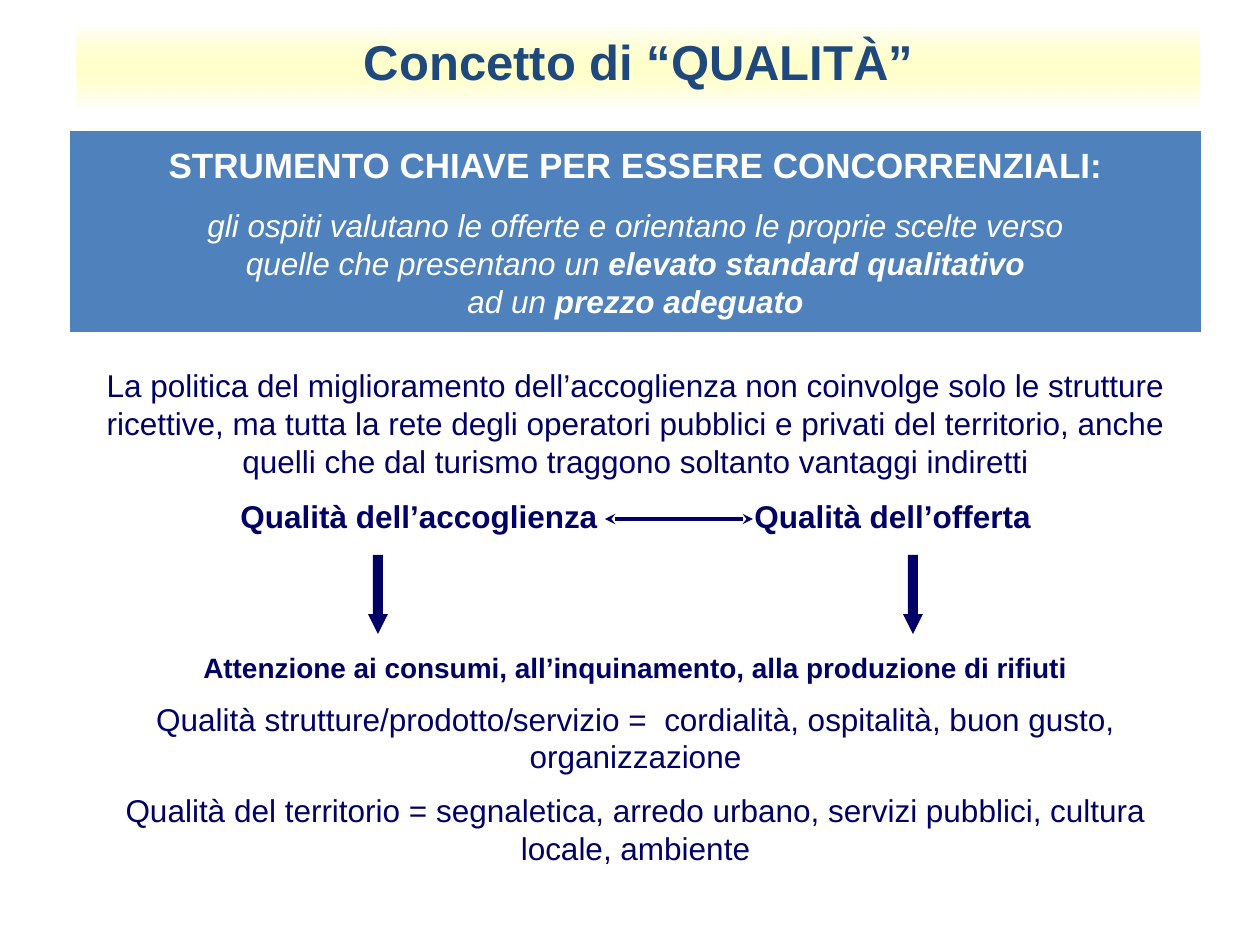
from lxml import etree
from pptx import Presentation
from pptx import util as u
from pptx.dml.color import RGBColor
from pptx.enum import shapes, text
from pptx.oxml import parse_xml
from pptx.oxml.ns import nsdecls, qn

PX = 914400 // 126
NAVY, WHITE, BLUE, TITLE_BLUE = "000066", "FFFFFF", "4F81BD", "1F497D"
CENTER, LEFT, RIGHT = text.PP_ALIGN.CENTER, text.PP_ALIGN.LEFT, text.PP_ALIGN.RIGHT


def px(*values):
    return [u.Emu(v * PX) for v in values]


def rgb(value):
    return RGBColor.from_string(value)


def set_frame(tf, anchor, inset_x=0.1, inset_y=0.05):
    tf.word_wrap = True
    tf.auto_size = text.MSO_AUTO_SIZE.NONE
    tf.vertical_anchor = anchor
    tf.margin_left = tf.margin_right = u.Inches(inset_x)
    tf.margin_top = tf.margin_bottom = u.Inches(inset_y)


def write(tf, paragraphs, color, align=CENTER):
    """Fill a frame with (runs, size, bold, italic, space before); a run in * is bold."""
    for i, (runs, size, bold, italic, before) in enumerate(paragraphs):
        p = tf.add_paragraph() if i else tf.paragraphs[0]
        p.alignment, p.space_before = align, u.Pt(before)
        p.font.name, p.font.size = "Arial", u.Pt(size)
        p.font.bold, p.font.italic = bold, italic
        p.font.color.rgb = rgb(color)
        for j, part in enumerate(runs.split("*")):
            if part:
                r = p.add_run()
                r.text = part
                # Runs carry the format as well, for viewers that skip paragraph defaults
                r.font.name, r.font.size = "Arial", u.Pt(size)
                r.font.bold, r.font.italic = bold or j % 2 == 1, italic
                r.font.color.rgb = rgb(color)


def add_title(s, title, box):
    sp = s.shapes.title
    sp.left, sp.top, sp.width, sp.height = px(*box)
    sp._element.spPr.append(parse_xml(
        f'<a:gradFill {nsdecls("a")} rotWithShape="1"><a:gsLst>'
        '<a:gs pos="0"><a:srgbClr val="FFFFFF"/></a:gs>'
        '<a:gs pos="50000"><a:srgbClr val="FFFF99"><a:alpha val="50000"/></a:srgbClr></a:gs>'
        '<a:gs pos="100000"><a:srgbClr val="FFFFFF"/></a:gs>'
        '</a:gsLst><a:lin ang="5400000" scaled="1"/></a:gradFill>'))
    tf = sp.text_frame
    set_frame(tf, text.MSO_ANCHOR.MIDDLE, 0, 0)
    write(tf, [(title, 28, True, False, 0)], TITLE_BLUE)
    tf.paragraphs[0].line_spacing = 0.8


def add_text(s, box, paragraphs, align=CENTER):
    tf = s.shapes.add_textbox(*px(*box)).text_frame
    set_frame(tf, text.MSO_ANCHOR.TOP)
    write(tf, paragraphs, NAVY, align)


def add_filled(s, kind, box, color):
    sp = s.shapes.add_shape(kind, *px(*box))
    sp.shadow.inherit = False
    sp.fill.solid()
    sp.fill.fore_color.rgb = rgb(color)
    sp.line.fill.background()
    return sp


def add_banner(s, box, paragraphs):
    sp = add_filled(s, shapes.MSO_SHAPE.RECTANGLE, box, BLUE)
    sp.line.color.rgb, sp.line.width = rgb(WHITE), u.Pt(1)
    set_frame(sp.text_frame, text.MSO_ANCHOR.MIDDLE)
    write(sp.text_frame, paragraphs, WHITE)


def add_down_arrow(s, box):
    sp = add_filled(s, shapes.MSO_SHAPE.DOWN_ARROW, box, NAVY)
    sp.adjustments[0], sp.adjustments[1] = 0.5, 1


def add_double_arrow(s, x1, x2, y):
    line = s.shapes.add_connector(shapes.MSO_CONNECTOR.STRAIGHT, *px(x1, y, x2, y))
    line.line.color.rgb, line.line.width = rgb(NAVY), u.Pt(2)
    ln = line.line._get_or_add_ln()
    for end in ("a:headEnd", "a:tailEnd"):
        etree.SubElement(ln, qn(end), type="stealth")
    etree.SubElement(line._element.spPr, qn("a:effectLst"))


def main():
    prs = Presentation()
    prs.slide_width, prs.slide_height = u.Inches(10), u.Inches(7.5)
    s = prs.slides.add_slide(prs.slide_layouts[5])

    add_title(s, "Concetto di “QUALITÀ”", (77, 26, 1123, 81))
    add_banner(s, (69, 130, 1133, 203), [
        ("STRUMENTO CHIAVE PER ESSERE CONCORRENZIALI:", 20, True, False, 0),
        ("gli ospiti valutano le offerte e orientano le proprie scelte verso",
         18, False, True, 12),
        ("quelle che presentano un *elevato standard qualitativo*", 18, False, True, 0),
        ("ad un *prezzo adeguato*", 18, False, True, 0),
    ])
    add_text(s, (80, 360, 1111, 126), [
        ("La politica del miglioramento dell’accoglienza non coinvolge solo le strutture "
         "ricettive, ma tutta la rete degli operatori pubblici e privati del territorio, "
         "anche quelli che dal turismo traggono soltanto vantaggi indiretti",
         18, False, False, 0),
    ])

    add_text(s, (200, 491, 410, 50),
             [("Qualità dell’accoglienza", 18, True, False, 0)], RIGHT)
    add_text(s, (742, 491, 410, 50),
             [("Qualità dell’offerta", 18, True, False, 0)], LEFT)
    add_double_arrow(s, 605, 753, 519)
    for x in (368, 903):
        add_down_arrow(s, (x, 555, 20, 79))

    add_text(s, (80, 644, 1111, 246), [
        ("Attenzione ai consumi, all’inquinamento, alla produzione di rifiuti",
         16, True, False, 0),
        ("Qualità strutture/prodotto/servizio =  cordialità, ospitalità, buon gusto, "
         "organizzazione", 18, False, False, 9),
        ("Qualità del territorio = segnaletica, arredo urbano, servizi pubblici, cultura "
         "locale, ambiente", 18, False, False, 9),
    ])
    prs.save("out.pptx")


if __name__ == "__main__":
    main()
